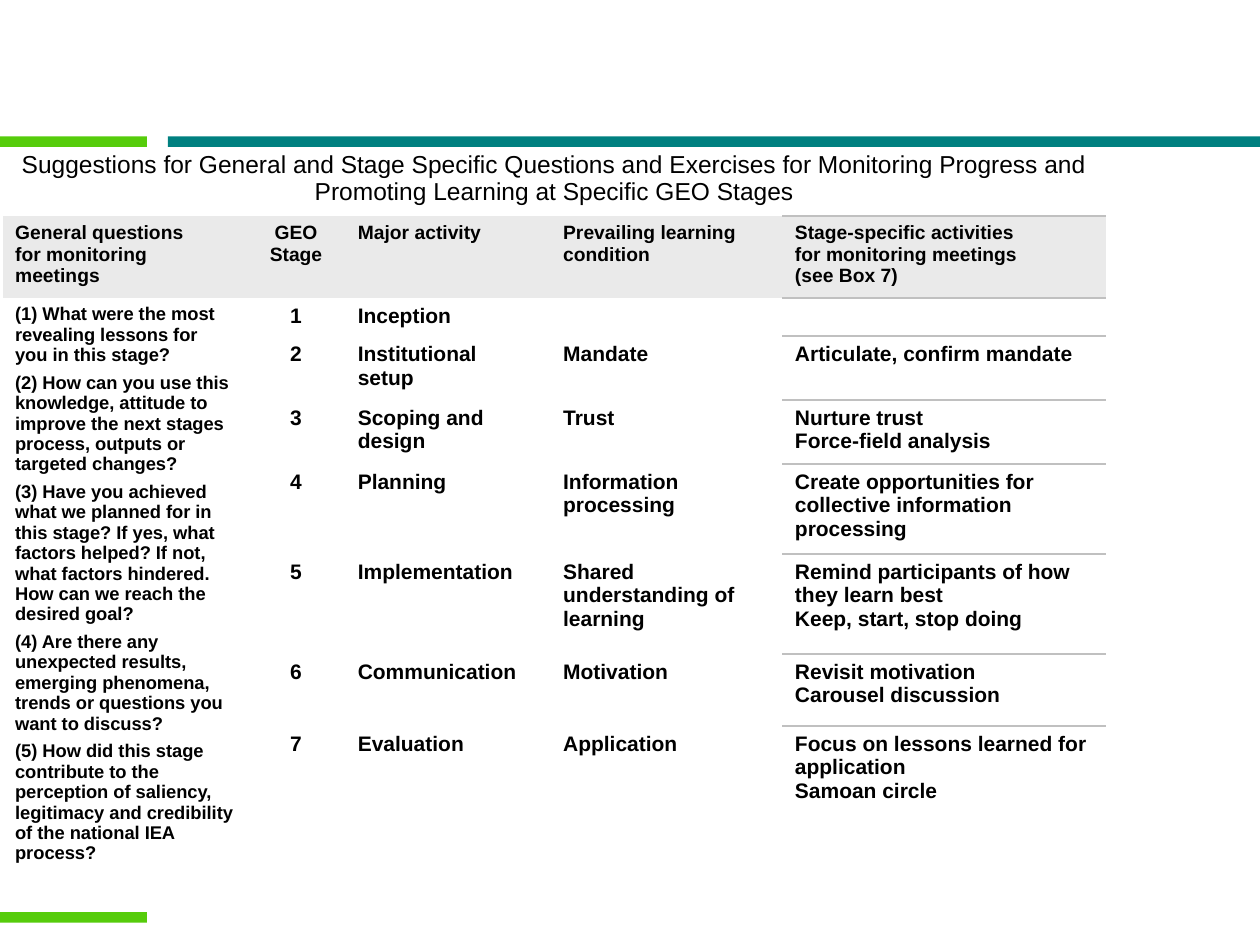
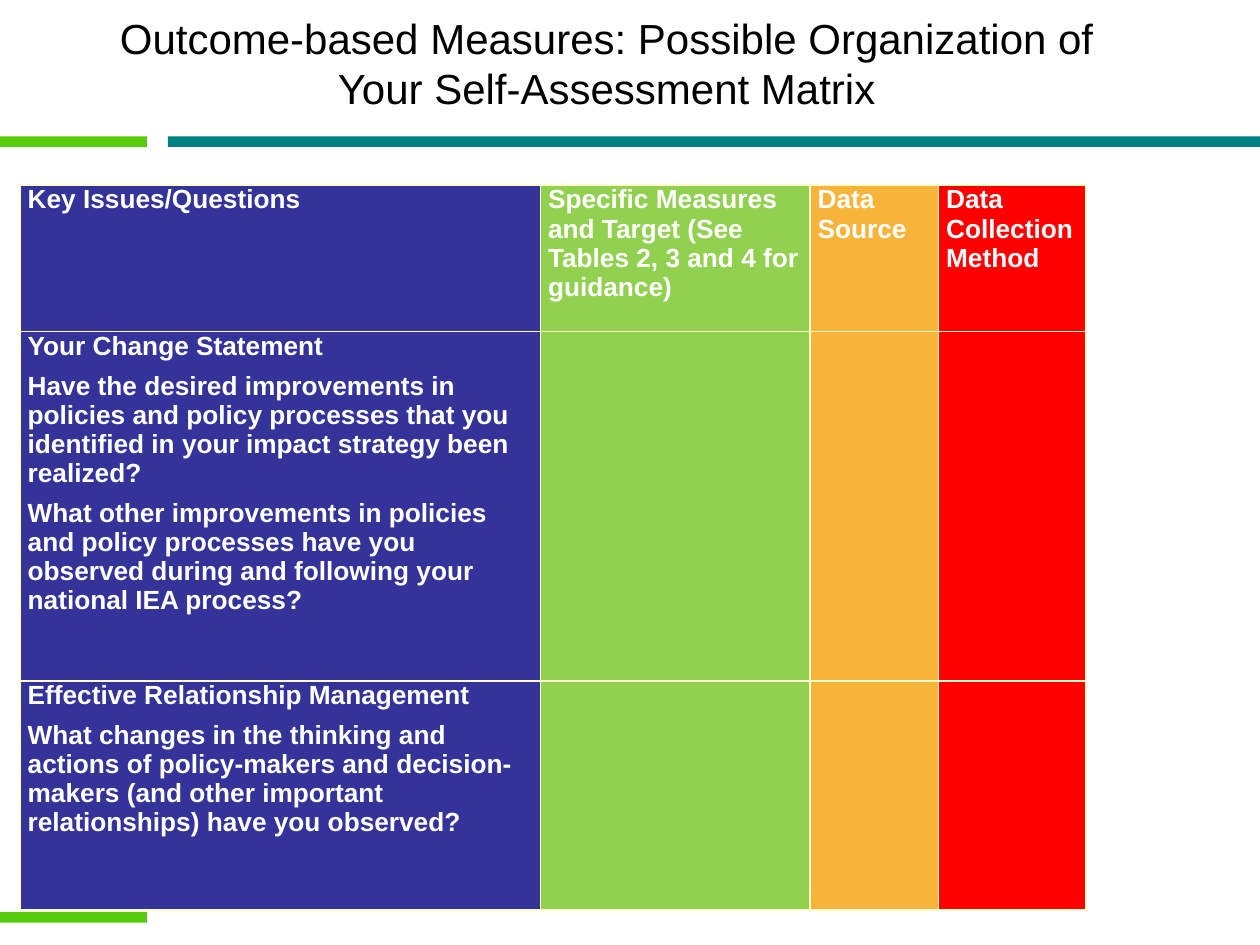
from dataclasses import dataclass

from lxml import etree
from pptx import Presentation
from pptx import util as u
from pptx.dml.color import RGBColor
from pptx.enum import shapes, text
from pptx.oxml.ns import qn

PLAIN_TABLE = "{2D5ABB26-0587-4C30-8999-92F81FD0307C}"
LEFT, CENTER = text.PP_ALIGN.LEFT, text.PP_ALIGN.CENTER


@dataclass(frozen=True)
class Theme:
    font: str = "Arial"
    ink: str = "000000"
    white: str = "FFFFFF"
    teal: str = "008080"
    lime: str = "56CC0B"
    header: str = "EAEAEA"
    rule: str = "C0C0C0"
    cream: str = "FFFFCC"
    matrix: tuple = ("333399", "92D050", "F7B43B", "FF0000")
    title: float = 24
    caption: float = 14
    heading: float = 11
    question: float = 10.5
    body: float = 12
    matrix_text: float = 15


class Deck:
    """Theme and current slide; lengths are percentages of the slide's size."""

    def __init__(self, theme):
        self.t = theme
        self.prs = Presentation()
        self.prs.slide_width, self.prs.slide_height = u.Inches(10), u.Inches(7.5)

    def x(self, share):
        return round(self.prs.slide_width * share / 100)

    def y(self, share):
        return round(self.prs.slide_height * share / 100)

    def box(self, left, top, width, height):
        return self.x(left), self.y(top), self.x(width), self.y(height)

    def slide(self):
        self.s = self.prs.slides.add_slide(self.prs.slide_layouts[6])
        self.band(13.33, 14.44, 86.67, self.t.teal)
        for top in (14.44, 96.53):
            self.band(0, top, 11.67, self.t.lime)

    def band(self, left, top, width, color):
        sp = self.s.shapes.add_shape(shapes.MSO_SHAPE.RECTANGLE,
                                     *self.box(left, top, width, 1.11))
        sp.shadow.inherit = False
        sp.fill.solid()
        sp.fill.fore_color.rgb = RGBColor.from_string(color)
        sp.line.fill.background()

    def title(self, words, *place):
        tf = self.s.shapes.add_textbox(*self.box(*place)).text_frame
        tf.word_wrap = True
        self.put_text(tf, words, self.t.title, bold=False, align=CENTER)

    def put_text(self, tf, words, size, color=None, bold=True, align=LEFT,
                 before=0, after=0):
        """Add one paragraph for each line of words."""
        for i, line in enumerate(words.split("\n")):
            p = tf.add_paragraph() if i else tf.paragraphs[0]
            p.alignment = align
            p.space_before = u.Pt(before if i else 0)
            p.space_after = u.Pt(after)
            if not line:
                etree.SubElement(p._p, qn("a:endParaRPr"), sz=str(round(size * 100)))
                continue
            r = p.add_run()
            r.text = line
            r.font.name, r.font.size, r.font.bold = self.t.font, u.Pt(size), bold
            r.font.color.rgb = RGBColor.from_string(color or self.t.ink)

    def table(self, left, top, cols, rows):
        place = self.box(left, top, sum(cols), sum(rows))
        frame = self.s.shapes.add_table(len(rows), len(cols), *place)
        tbl = frame.table
        tbl.first_row = tbl.horz_banding = False
        tbl._tbl.tblPr.find(qn("a:tableStyleId")).text = PLAIN_TABLE
        for col, width in zip(tbl.columns, cols):
            col.width = self.x(width)
        for row, height in zip(tbl.rows, rows):
            row.height = self.y(height)
        return tbl

    def cell(self, cell, words, size, fill=None, edges="", edge_color=None,
             margins=(0.1, 0.05), **style):
        """Fill one cell; edges lists the sides (L, R, T, B) that have a line."""
        cell.margin_left = cell.margin_right = u.Inches(margins[0])
        cell.margin_top = cell.margin_bottom = u.Inches(margins[1])
        tcPr = cell._tc.get_or_add_tcPr()
        for side in "LRTB":
            ln = etree.SubElement(tcPr, qn(f"a:ln{side}"), w=str(u.Pt(1)))
            if side in edges:
                solid = etree.SubElement(ln, qn("a:solidFill"))
                etree.SubElement(solid, qn("a:srgbClr"), val=edge_color)
            else:
                etree.SubElement(ln, qn("a:noFill"))
        if fill:
            cell.fill.solid()
            cell.fill.fore_color.rgb = RGBColor.from_string(fill)
        else:
            cell.fill.background()
        self.put_text(cell.text_frame, words, size, **style)


CAPTION = ("Suggestions for General and Stage Specific Questions and Exercises for "
           "Monitoring Progress and Promoting Learning at Specific GEO Stages")
STAGE_HEADINGS = (
    "General questions\nfor monitoring meetings", "GEO Stage", "Major activity",
    "Prevailing learning condition",
    "Stage-specific activities\nfor monitoring meetings\n(see Box 7)")
QUESTIONS = "\n".join((
    "(1) What were the most revealing lessons for you in this stage?",
    "(2) How can you use this knowledge, attitude to improve the next stages process, "
    "outputs or targeted changes?",
    "(3) Have you achieved what we planned for in this stage? If yes, what factors "
    "helped? If not, what factors hindered. How can we reach the desired goal?",
    "(4) Are there any unexpected results, emerging phenomena, trends or questions you "
    "want to discuss?",
    "(5) How did this stage contribute to the perception of saliency, legitimacy and "
    "credibility of the national IEA process?"))
STAGES = (
    ("Inception", "", ""),
    ("Institutional setup", "Mandate", "Articulate, confirm mandate"),
    ("Scoping and design", "Trust", "Nurture trust\nForce-field analysis"),
    ("Planning", "Information processing",
     "Create opportunities for collective information processing"),
    ("Implementation", "Shared understanding of learning",
     "Remind participants of how they learn best\nKeep, start, stop doing"),
    ("Communication", "Motivation", "Revisit motivation\nCarousel discussion"),
    ("Evaluation", "Application",
     "Focus on lessons learned for application\nSamoan circle"))

MATRIX_TITLE = ("Outcome-based Measures: Possible Organization of "
                "Your Self-Assessment Matrix")
MATRIX = (
    ("Key Issues/Questions",
     "Specific Measures and Target (See Tables 2, 3 and 4 for guidance)",
     "Data Source", "Data Collection Method"),
    ("Your Change Statement\n"
     "Have the desired improvements in policies and policy processes that you identified "
     "in your impact strategy been realized?\n"
     "What other improvements in policies and policy processes have you observed during "
     "and following your national IEA process?", "", "", ""),
    ("Effective Relationship Management\n"
     "What changes in the thinking and actions of policy-makers and decision-makers (and "
     "other important relationships) have you observed?", "", "", ""))


def stages_slide(d):
    t = d.t
    d.slide()
    tbl = d.table(0.2, 15.33, (19.4, 7.8, 16.3, 18.4, 25.7),
                  (7.53, 8.67, 4.03, 6.77, 6.77, 9.52, 10.58, 7.62, 16.4))
    tbl.cell(0, 0).merge(tbl.cell(0, 4))
    tbl.cell(2, 0).merge(tbl.cell(8, 0))

    for c, heading in enumerate(STAGE_HEADINGS):
        d.cell(tbl.cell(0, c), "" if c else CAPTION, t.caption, bold=False, align=CENTER)
        d.cell(tbl.cell(1, c), heading, t.heading, t.header,
               edges="TB" if c == 4 else "", edge_color=t.rule,
               align=CENTER if c == 1 else LEFT)

    for n, stage in enumerate(STAGES, 1):
        d.cell(tbl.cell(n + 1, 0), QUESTIONS if n == 1 else "", t.question,
               before=0.4 * t.question)
        d.cell(tbl.cell(n + 1, 1), str(n), t.body, align=CENTER)
        for c, words in enumerate(stage, 2):
            edges = "" if c < 4 else "T" if n == len(STAGES) else "TB"
            d.cell(tbl.cell(n + 1, c), words, t.body, edges=edges, edge_color=t.rule)


def matrix_slide(d):
    t = d.t
    d.slide()
    d.title(MATRIX_TITLE, 8.3, 0.67, 79.7, 10.53)
    tbl = d.table(1.6, 19.6, (41.3, 21.4, 10.2, 11.7), (15.5, 36.95, 24.27))
    for i, row in enumerate(MATRIX):
        for c, words in enumerate(row):
            d.cell(tbl.cell(i, c), words, t.matrix_text, t.matrix[c], edges="LRTB",
                   edge_color=t.cream, margins=(0.06, 0), color=t.white, after=6)


def main():
    d = Deck(Theme())
    stages_slide(d)
    matrix_slide(d)
    d.prs.save("out.pptx")


if __name__ == "__main__":
    main()
